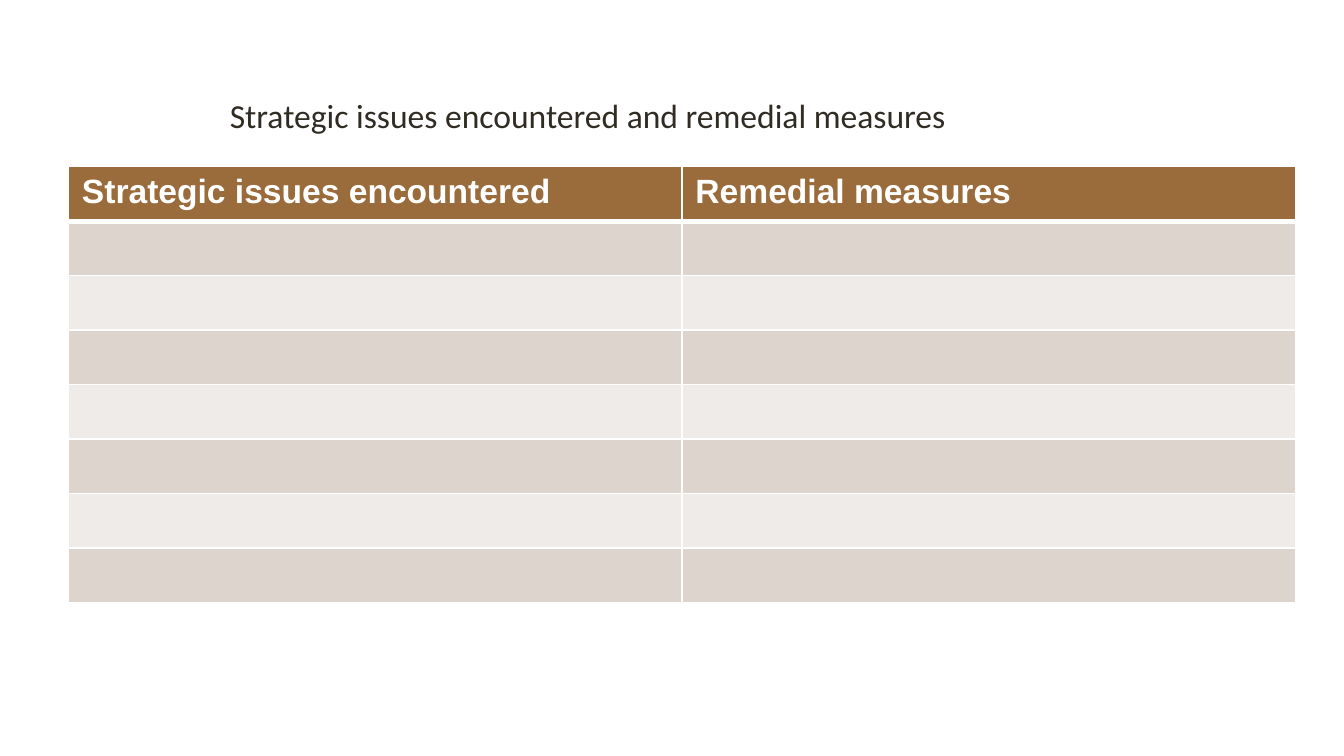
import lxml.etree
import pptx
import pptx.dml.color
import pptx.enum.text
import pptx.oxml.ns
import pptx.util
from pptx.util import Inches

TITLE = "Strategic issues encountered and remedial measures"
HEADERS = ["Strategic issues encountered", "Remedial measures"]
EMPTY_ROWS = 7
COLORS = {
    "title": "302C24",
    "header": "9A6B3B",
    "odd_row": "DED4CE",
    "even_row": "EFEBE8",
    "white": "FFFFFF",
}
SLIDE_WIDTH = 10
SLIDE_HEIGHT = SLIDE_WIDTH * 9 / 16
TABLE_LEFT, TABLE_TOP, TABLE_WIDTH, TABLE_HEIGHT = 0.51, 1.24, 9.13, 3.24


def rgb(name):
    return pptx.dml.color.RGBColor.from_string(COLORS[name])


def write_text(text_frame, text, font, color, size=18, bold=False, line_spacing=None):
    paragraph = text_frame.paragraphs[0]
    paragraph.alignment = pptx.enum.text.PP_ALIGN.LEFT
    paragraph.line_spacing = line_spacing
    run = paragraph.add_run()
    run.text = text
    run.font.name = font
    run.font.size = pptx.util.Pt(size)
    run.font.bold = bold
    run.font.color.rgb = rgb(color)


def set_borders(cell, widths):
    """Draw white borders; widths maps the sides L, R, T and B to points."""
    properties = cell._tc.get_or_add_tcPr()
    qn = pptx.oxml.ns.qn
    for position, (side, width) in enumerate(widths.items()):
        line = lxml.etree.Element(qn(f"a:ln{side}"), w=str(pptx.util.Pt(width)))
        fill = lxml.etree.SubElement(line, qn("a:solidFill"))
        lxml.etree.SubElement(fill, qn("a:srgbClr"), val=COLORS["white"])
        properties.insert(position, line)


def add_title(slide):
    title = slide.shapes.title
    title.left, title.top = Inches(1.61), Inches(0.69)
    title.width, title.height = Inches(7.62), Inches(0.63)
    title.text_frame.word_wrap = True
    title.text_frame.auto_size = pptx.enum.text.MSO_AUTO_SIZE.NONE
    title.text_frame.vertical_anchor = pptx.enum.text.MSO_ANCHOR.TOP
    write_text(title.text_frame, TITLE, "Calibri", "title", line_spacing=0.9)


def add_issues_table(slide):
    row_count = EMPTY_ROWS + 1
    table = slide.shapes.add_table(
        row_count, len(HEADERS), Inches(TABLE_LEFT), Inches(TABLE_TOP),
        Inches(TABLE_WIDTH), Inches(TABLE_HEIGHT)).table
    for row_index, row in enumerate(table.rows):
        row.height = Inches(TABLE_HEIGHT / row_count)
        if row_index == 0:
            fill_name = "header"
        else:
            fill_name = "odd_row" if row_index % 2 else "even_row"
        for cell, header in zip(row.cells, HEADERS):
            cell.fill.solid()
            cell.fill.fore_color.rgb = rgb(fill_name)
            set_borders(cell, {
                "L": 1,
                "R": 1,
                "T": 3 if row_index == 1 else 1,
                "B": 3 if row_index == 0 else 1,
            })
            if row_index == 0:
                write_text(cell.text_frame, header, "Arial", "white", bold=True)


def main():
    presentation = pptx.Presentation()
    presentation.slide_width = Inches(SLIDE_WIDTH)
    presentation.slide_height = Inches(SLIDE_HEIGHT)
    title_only = presentation.slide_layouts.get_by_name("Title Only")
    slide = presentation.slides.add_slide(title_only)
    add_title(slide)
    add_issues_table(slide)
    presentation.save("out.pptx")


if __name__ == "__main__":
    main()
